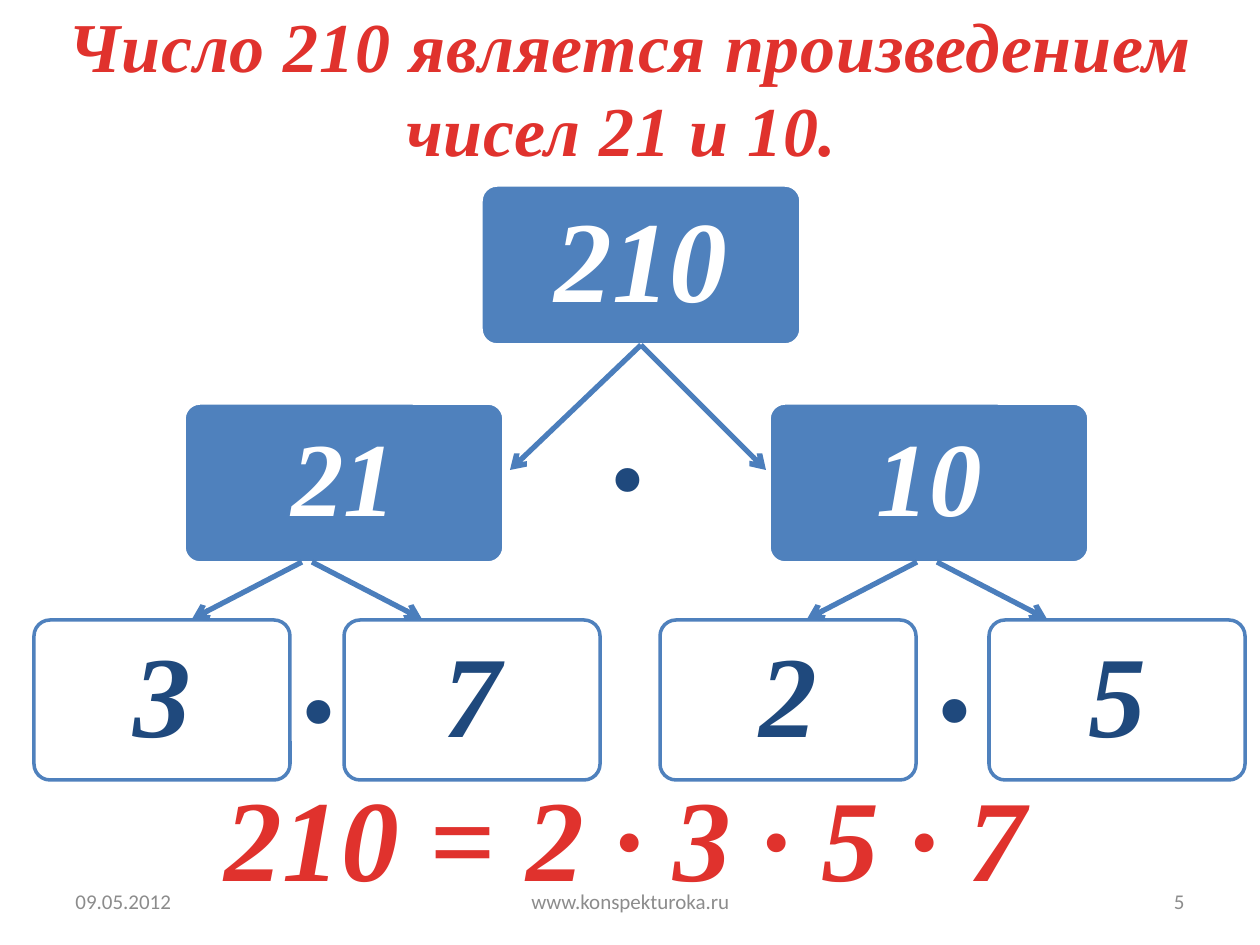
from pptx import Presentation
from pptx import util as u
from pptx.dml import color
from pptx.enum import shapes, text
from pptx.oxml import ns, xmlchemy

SCALE = 914400 / 126
COLORS = {
    "red": "E0322D",
    "blue": "4F81BD",
    "arrow": "4B7EBC",
    "navy": "1F497D",
    "white": "FFFFFF",
    "gray": "8C8C8C",
}
ALIGN = text.PP_ALIGN
ANCHOR = text.MSO_ANCHOR
SERIF = "Times New Roman"
SANS = "Calibri"


def px(*lengths):
    return [u.Emu(round(length * SCALE)) for length in lengths]


def rgb(name):
    return color.RGBColor.from_string(COLORS[name])


class FactorPage:
    def __init__(self, page):
        self.page = page

    def add_words(self, frame, words, size, tint, font=SERIF, bold=True,
                  align=ALIGN.CENTER, spacing=None):
        para = frame.paragraphs[0]
        para.alignment = align
        span = para.add_run()
        span.text = words
        span.font.size = u.Pt(size)
        span.font.name = font
        span.font.bold = bold
        span.font.italic = bold
        span.font.color.rgb = rgb(tint)
        if spacing:
            span.font._element.set("spc", str(spacing))
        return para

    def title(self, words, *area):
        box = self.page.shapes.title
        box.left, box.top, box.width, box.height = px(*area)
        frame = box.text_frame
        frame.auto_size = text.MSO_AUTO_SIZE.NONE
        frame.vertical_anchor = ANCHOR.TOP
        self.add_words(frame, words, 40, "red", spacing=50)

    def label(self, words, area, size, tint, wrap=False, anchor=ANCHOR.TOP, **style):
        box = self.page.shapes.add_textbox(*px(*area))
        frame = box.text_frame
        frame.word_wrap = wrap
        frame.vertical_anchor = anchor
        self.add_words(frame, words, size, tint, **style)

    def footer(self, words, left, width, align):
        self.label(words, (left, 876, width, 50), 12, "gray", wrap=True,
                   anchor=ANCHOR.MIDDLE, font=SANS, bold=False, align=align)

    def dot(self, left, top):
        self.label(".", (left, top, 77, 257), 115, "navy", bold=False, align=ALIGN.LEFT)

    def number(self, words, left, top, width, size, fill, line, tint, inset):
        box = self.page.shapes.add_shape(
            shapes.MSO_SHAPE.ROUNDED_RECTANGLE, *px(left, top, width, 160))
        box.adjustments[0] = 0.1
        box.shadow.inherit = False
        box.fill.solid()
        box.fill.fore_color.rgb = rgb(fill)
        box.line.color.rgb = rgb(line)
        box.line.width = u.Pt(2)
        frame = box.text_frame
        frame.word_wrap = True
        frame.vertical_anchor = ANCHOR.MIDDLE
        frame.margin_left, frame.margin_right = px(inset, inset)
        frame.margin_top, frame.margin_bottom = px(inset - 4, inset - 4)
        para = self.add_words(frame, words, size, tint)
        para.line_spacing = 0.9
        return box

    def product(self, words, left, top, size):
        return self.number(words, left, top, 320, size, "blue", "white", "white", 19)

    def factor(self, words, left):
        return self.number(words, left, 620, 256, 66, "white", "blue", "navy", 16)

    def arrow(self, left, top, right, bottom, source=None):
        line = self.page.shapes.add_connector(
            shapes.MSO_CONNECTOR.STRAIGHT, *px(left, top, right, bottom))
        if source is not None:
            line.begin_connect(source, 2)
        line.line.color.rgb = rgb("arrow")
        line.line.width = u.Pt(3)
        tail = xmlchemy.OxmlElement("a:tailEnd")
        tail.set("type", "arrow")
        properties = line._element.spPr
        properties.find(ns.qn("a:ln")).append(tail)
        properties.append(xmlchemy.OxmlElement("a:effectLst"))


def main():
    deck = Presentation()
    deck.slide_width, deck.slide_height = px(1260, 945)
    page = FactorPage(deck.slides.add_slide(deck.slide_layouts[5]))

    page.footer("09.05.2012", 63, 294, ALIGN.LEFT)
    page.footer("www.konspekturoka.ru", 431, 399, ALIGN.CENTER)
    page.footer("5", 903, 294, ALIGN.RIGHT)
    page.title("Число 210 является произведением чисел 21 и 10. ", 23, -4, 1216, 183)

    page.product("21", 184, 403, 60)
    page.product("10", 769, 403, 60)
    page.dot(590, 282)
    root = page.product("210", 481, 185, 66)
    for end in (510, 766):
        page.arrow(641, 345, end, 470, root)

    for digit, left in (("7", 344), ("3", 34), ("2", 660), ("5", 989)):
        page.factor(digit, left)
    page.dot(281, 514)
    page.dot(917, 513)
    for start, shift in ((302, -110), (312, 110), (917, -110), (937, 110)):
        page.arrow(start, 562, start + shift, 619)

    page.label("210 = 2 ∙ 3 ∙ 5 ∙ 7", (212, 760, 838, 152), 66, "red",
               align=ALIGN.LEFT, spacing=50)

    deck.save("out.pptx")


if __name__ == "__main__":
    main()
